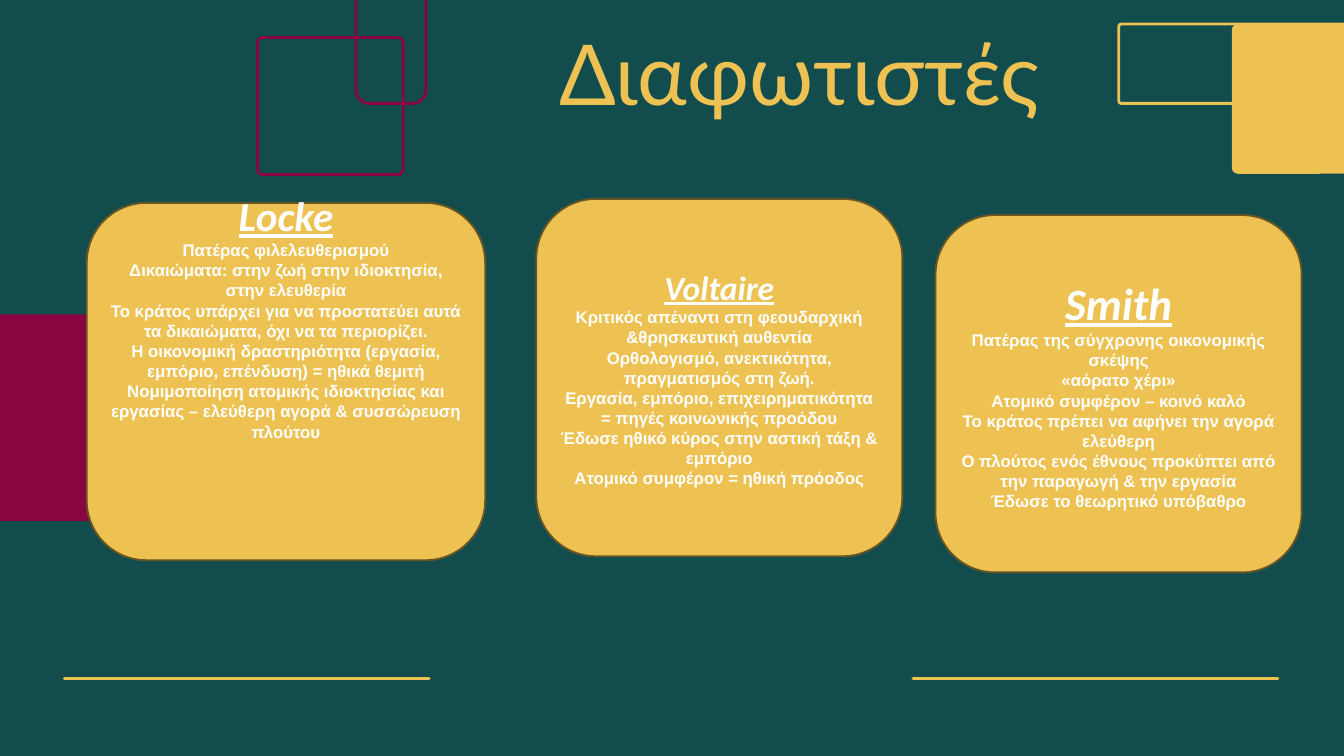
from dataclasses import dataclass

from lxml import etree
from pptx import Presentation
from pptx import util as u
from pptx.dml.color import RGBColor
from pptx.enum import shapes, text
from pptx.oxml.ns import qn


@dataclass(frozen=True)
class Theme:
    teal: RGBColor = RGBColor.from_string("134C4D")
    gold: RGBColor = RGBColor.from_string("EDC253")
    wine: RGBColor = RGBColor.from_string("890540")
    brown: RGBColor = RGBColor.from_string("685524")
    white: RGBColor = RGBColor.from_string("FFFFFF")
    title_size: int = 90
    body_size: int = 18
    title_font: str = "Lato"
    name_font: str = "Calibri"
    body_font: str = "Arial"


theme = Theme()


def add_rounded(box, radius=None, fill=None, line=None, width=3):
    shape = slide.shapes.add_shape(
        shapes.MSO_SHAPE.ROUNDED_RECTANGLE, *[u.Cm(value) for value in box])
    shape.shadow.inherit = False
    if radius is not None:
        shape.adjustments[0] = radius
    if fill is None:
        shape.fill.background()
    else:
        shape.fill.solid()
        shape.fill.fore_color.rgb = fill
    if line is None:
        shape.line.fill.background()
    else:
        shape.line.color.rgb = line
        shape.line.width = u.Pt(width)
    return shape


def add_run(paragraph, words, font, size, color):
    paragraph.alignment = text.PP_ALIGN.CENTER
    run = paragraph.add_run()
    run.text = words
    run.font.name = font
    run.font.size = u.Pt(size)
    run.font.color.rgb = color
    return run


presentation = Presentation()
presentation.slide_width = u.Cm(50.8)
presentation.slide_height = u.Cm(28.58)
slide = presentation.slides.add_slide(presentation.slide_layouts[5])
slide.background.fill.solid()
slide.background.fill.fore_color.rgb = theme.teal

# Lines at the foot
for left in (34.52, 2.44):
    line = slide.shapes.add_connector(
        shapes.MSO_CONNECTOR.STRAIGHT,
        u.Cm(left), u.Cm(25.65), u.Cm(left + 13.77), u.Cm(25.65))
    line.line.color.rgb = theme.gold
    line.line.width = u.Pt(4)
    line.line._get_or_add_ln().set("cap", "rnd")
    etree.SubElement(line._element.spPr, qn("a:effectLst"))

# Decorative blocks and frames
add_rounded((-3.81, 11.89, 15.52, 7.8), 0.03, fill=theme.wine)
add_rounded((46.56, 0.91, 6.02, 5.66), 0.04, fill=theme.gold)
add_rounded((42.29, 0.91, 14.55, 3), 0.03, line=theme.gold)
add_rounded((13.46, -0.69, 2.64, 4.6), 0.19, line=theme.wine)
add_rounded((9.73, 1.42, 5.51, 5.18), 0.04, line=theme.wine)

# Title
title = slide.shapes.title
title.left, title.top = u.Cm(15.16), u.Cm(0.69)
title.width, title.height = u.Cm(30.94), u.Cm(4.09)
title.text_frame.auto_size = text.MSO_AUTO_SIZE.NONE
title.text_frame.vertical_anchor = text.MSO_ANCHOR.MIDDLE
add_run(title.text_frame.paragraphs[0], "Διαφωτιστές ",
        theme.title_font, theme.title_size, theme.gold)

# Thinker cards: left, top, width, bottom inset, name size, name, points
cards = [
    (3.28, 7.67, 15.06, 5.08, 44, "Locke", [
        "Πατέρας φιλελευθερισμού",
        "Δικαιώματα: στην ζωή στην ιδιοκτησία, στην ελευθερία",
        "Το κράτος υπάρχει για να προστατεύει αυτά τα δικαιώματα, "
        "όχι να τα περιορίζει.",
        "Η οικονομική δραστηριότητα (εργασία, εμπόριο, επένδυση) = ηθικά θεμιτή",
        "Νομιμοποίηση ατομικής ιδιοκτησίας και εργασίας – ελεύθερη αγορά & "
        "συσσώρευση πλούτου",
    ]),
    (20.27, 7.52, 13.84, 0.13, 36, "Voltaire", [
        "Κριτικός απέναντι στη φεουδαρχική &θρησκευτική αυθεντία",
        "Ορθολογισμό, ανεκτικότητα, πραγματισμός στη ζωή.",
        "Εργασία, εμπόριο, επιχειρηματικότητα = πηγές κοινωνικής προόδου",
        "Έδωσε ηθικό κύρος στην αστική τάξη & εμπόριο",
        "Ατομικό συμφέρον = ηθική πρόοδος",
    ]),
    (35.36, 8.13, 13.84, 0.13, 48, "Smith", [
        "Πατέρας της σύγχρονης οικονομικής σκέψης",
        "«αόρατο χέρι»",
        "Ατομικό συμφέρον – κοινό καλό",
        "Το κράτος πρέπει να αφήνει την αγορά ελεύθερη",
        "Ο πλούτος ενός έθνους προκύπτει από την παραγωγή & την εργασία",
        "Έδωσε το θεωρητικό υπόβαθρο",
    ]),
]
for left, top, width, inset, name_size, name, points in cards:
    card = add_rounded((left, top, width, 13.51),
                       fill=theme.gold, line=theme.brown, width=2)
    frame = card.text_frame
    frame.word_wrap = True
    frame.vertical_anchor = text.MSO_ANCHOR.MIDDLE
    frame.margin_bottom = u.Cm(inset)
    heading = add_run(frame.paragraphs[0], name,
                      theme.name_font, name_size, theme.white)
    heading.font.bold = heading.font.italic = heading.font.underline = True
    for point in points:
        run = add_run(frame.add_paragraph(), point,
                      theme.body_font, theme.body_size, theme.white)
        run.font.bold = True

presentation.save("out.pptx")
